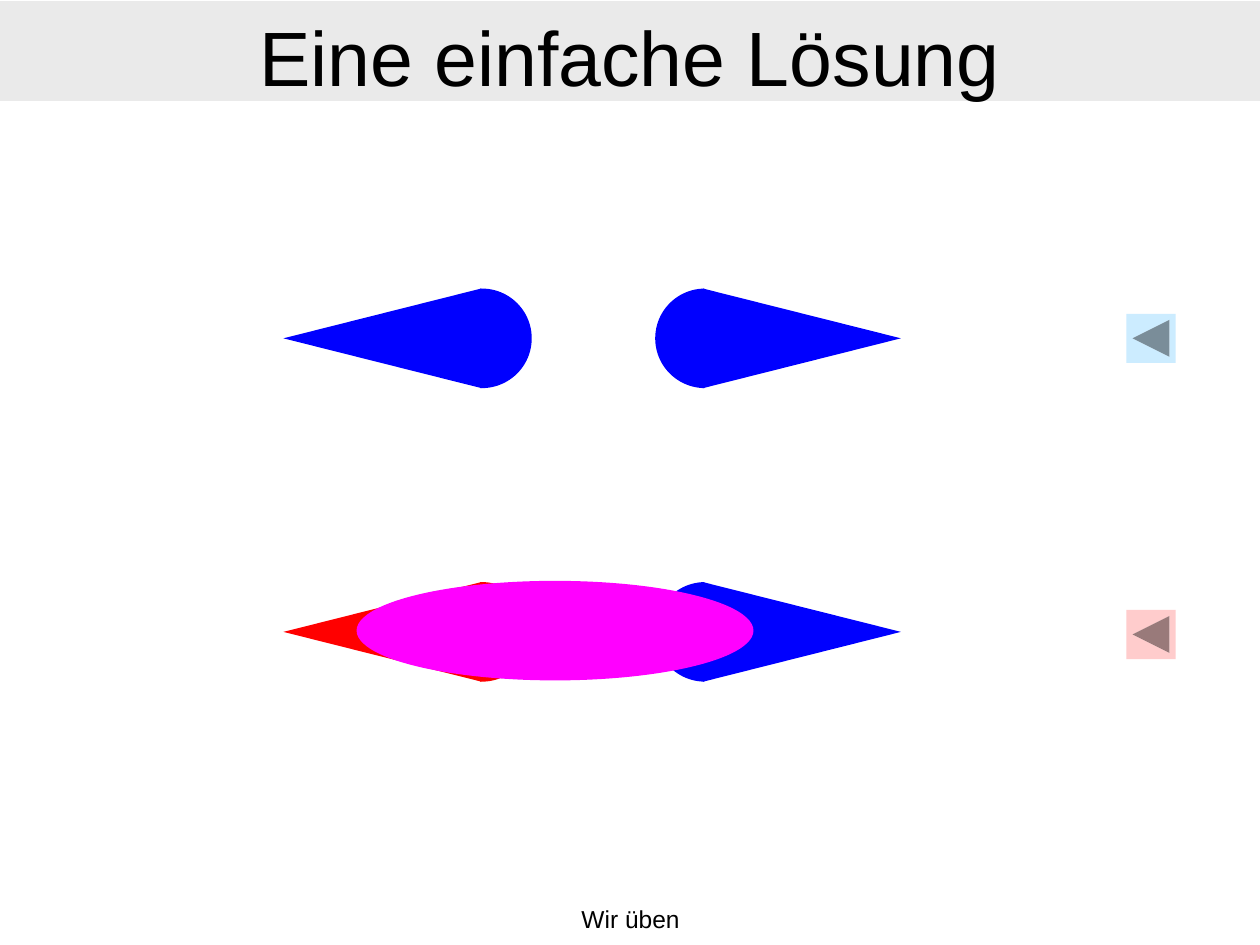
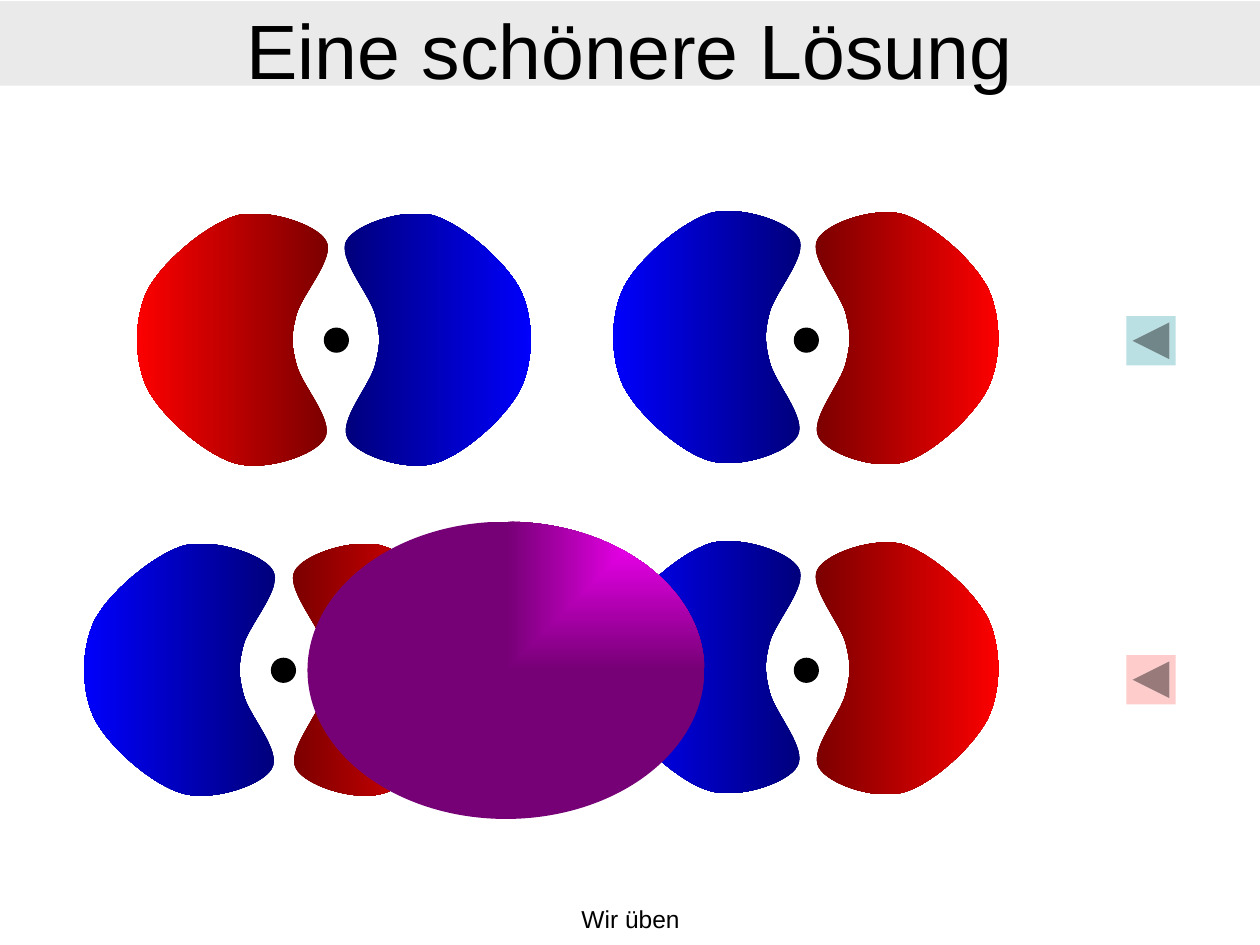
from lxml import etree
from pptx import Presentation
from pptx import util as u
from pptx.dml.color import RGBColor
from pptx.enum import shapes, text
from pptx.oxml import ns

PX = 9144
FONT = "Arial"
BLACK = RGBColor(0x00, 0x00, 0x00)
WHITE = RGBColor(0xFF, 0xFF, 0xFF)
BAND = RGBColor(0xEA, 0xEA, 0xEA)
BLUE = RGBColor(0x00, 0x00, 0xFF)
DARK_BLUE = RGBColor(0x00, 0x00, 0x76)
RED = RGBColor(0xFF, 0x00, 0x00)
DARK_RED = RGBColor(0x76, 0x00, 0x00)
MAGENTA = RGBColor(0xFF, 0x00, 0xFF)
DARK_MAGENTA = RGBColor(0x76, 0x00, 0x76)
SKY = RGBColor(0xCC, 0xEC, 0xFF)
TEAL = RGBColor(0xBB, 0xE0, 0xE3)
PINK = RGBColor(0xFF, 0xCC, 0xCC)

OVAL = shapes.MSO_SHAPE.OVAL
RECTANGLE = shapes.MSO_SHAPE.RECTANGLE
TRIANGLE = shapes.MSO_SHAPE.ISOSCELES_TRIANGLE
BACK_BUTTON = shapes.MSO_SHAPE.ACTION_BUTTON_BACK_OR_PREVIOUS

LOBE_WIDTH = 157
LOBE_POINTS = [
    (77, 6),
    (100, 13), (134, 42), (146, 65),
    (157, 88), (157, 121), (146, 144),
    (134, 167), (100, 197), (77, 203),
    (54, 209), (16, 196), (9, 183),
    (1, 169), (27, 141), (31, 124),
    (35, 108), (35, 101), (31, 85),
    (27, 69), (0, 39), (8, 26),
    (15, 13), (54, 0), (77, 6),
]


def add_plain(slide, kind, left, top, width, height, color):
    shape = slide.shapes.add_shape(kind, left * PX, top * PX, width * PX, height * PX)
    shape.shadow.inherit = False
    shape.fill.solid()
    shape.fill.fore_color.rgb = color
    shape.line.fill.background()
    return shape


def add_text(shape, words, size):
    frame = shape.text_frame
    frame.word_wrap = True
    frame.auto_size = text.MSO_AUTO_SIZE.NONE
    frame.vertical_anchor = text.MSO_ANCHOR.MIDDLE
    paragraph = frame.paragraphs[0]
    paragraph.alignment = text.PP_ALIGN.CENTER
    run = paragraph.add_run()
    run.text = words
    run.font.name = FONT
    run.font.size = u.Pt(size)
    run.font.color.rgb = BLACK


presentation = Presentation()
presentation.slide_width = 1000 * PX
presentation.slide_height = 750 * PX

slides = []
for title_words, band_height in [("Eine einfache Lösung", 79), ("Eine schönere Lösung", 67)]:
    slide = presentation.slides.add_slide(presentation.slide_layouts[5])
    footer = slide.shapes.add_textbox(342 * PX, 710 * PX, 317 * PX, 39 * PX)
    add_text(footer, "Wir üben", 14)
    title = slide.shapes.title
    title.left, title.top = 0, PX
    title.width, title.height = 1000 * PX, band_height * PX
    title.fill.solid()
    title.fill.fore_color.rgb = BAND
    add_text(title, title_words, 44)
    title.text_frame.margin_top = 8 * PX
    title.text_frame.margin_bottom = 0
    slides.append(slide)
simple, pretty = slides

for row_top, left_color in [(229, BLUE), (462, RED)]:
    for color, circle_left, cover_left, tip_left, rotation in [
        (left_color, 343, 224, 264, 270),
        (BLUE, 520, 559, 597, 90),
    ]:
        add_plain(simple, OVAL, circle_left, row_top, 79, 79, color)
        add_plain(simple, RECTANGLE, cover_left, row_top - 8, 157, 94, WHITE)
        tip = add_plain(simple, TRIANGLE, tip_left, row_top - 39, 79, 157, color)
        tip.rotation = rotation
add_plain(simple, OVAL, 283, 461, 315, 79, MAGENTA)

for inner_edge, top, width, side, bright, dark in [
    (267, 165, 157, 1, BLUE, DARK_BLUE),
    (267, 165, 161, -1, RED, DARK_RED),
    (642, 163, 158, -1, BLUE, DARK_BLUE),
    (641, 164, 154, 1, RED, DARK_RED),
    (226, 427, 157, 1, RED, DARK_RED),
    (225, 427, 161, -1, BLUE, DARK_BLUE),
    (642, 425, 158, -1, BLUE, DARK_BLUE),
    (641, 426, 154, 1, RED, DARK_RED),
]:
    stretch = side * width / LOBE_WIDTH
    points = [((inner_edge + x * stretch) * PX, (top + y) * PX) for x, y in LOBE_POINTS]
    builder = pretty.shapes.build_freeform(*points[0])
    builder.add_line_segments(points[1:], close=True)
    lobe = builder.convert_to_shape()
    segments = lobe.element.findall(".//" + ns.qn("a:lnTo"))
    for index in range(0, len(segments), 3):
        curve = etree.Element(ns.qn("a:cubicBezTo"))
        segments[index].addprevious(curve)
        for segment in segments[index:index + 3]:
            curve.append(segment[0])
            segment.getparent().remove(segment)
    lobe.shadow.inherit = False
    lobe.line.fill.background()
    lobe.fill.gradient()
    lobe.fill.gradient_angle = 0 if side == 1 else 180
    for stop, color in zip(lobe.fill.gradient_stops, (dark, bright)):
        stop.color.rgb = color

for left, top in [(257, 260), (630, 260), (215, 522), (630, 522)]:
    add_plain(pretty, OVAL, left, top, 20, 20, BLACK)

for slide, top, color in [
    (simple, 249, SKY),
    (simple, 484, PINK),
    (pretty, 251, TEAL),
    (pretty, 520, PINK),
]:
    add_plain(slide, BACK_BUTTON, 894, top, 39, 39, color)

overlap = add_plain(pretty, OVAL, 244, 414, 315, 236, MAGENTA)
overlap.fill.gradient()
for stop, color in zip(overlap.fill.gradient_stops, (MAGENTA, DARK_MAGENTA)):
    stop.color.rgb = color
gradient = overlap.element.spPr.find(ns.qn("a:gradFill"))
gradient.remove(gradient.find(ns.qn("a:lin")))
focus = etree.SubElement(gradient, ns.qn("a:path"), path="rect")
etree.SubElement(focus, ns.qn("a:fillToRect"), l="100000", b="100000")

presentation.save("out.pptx")
